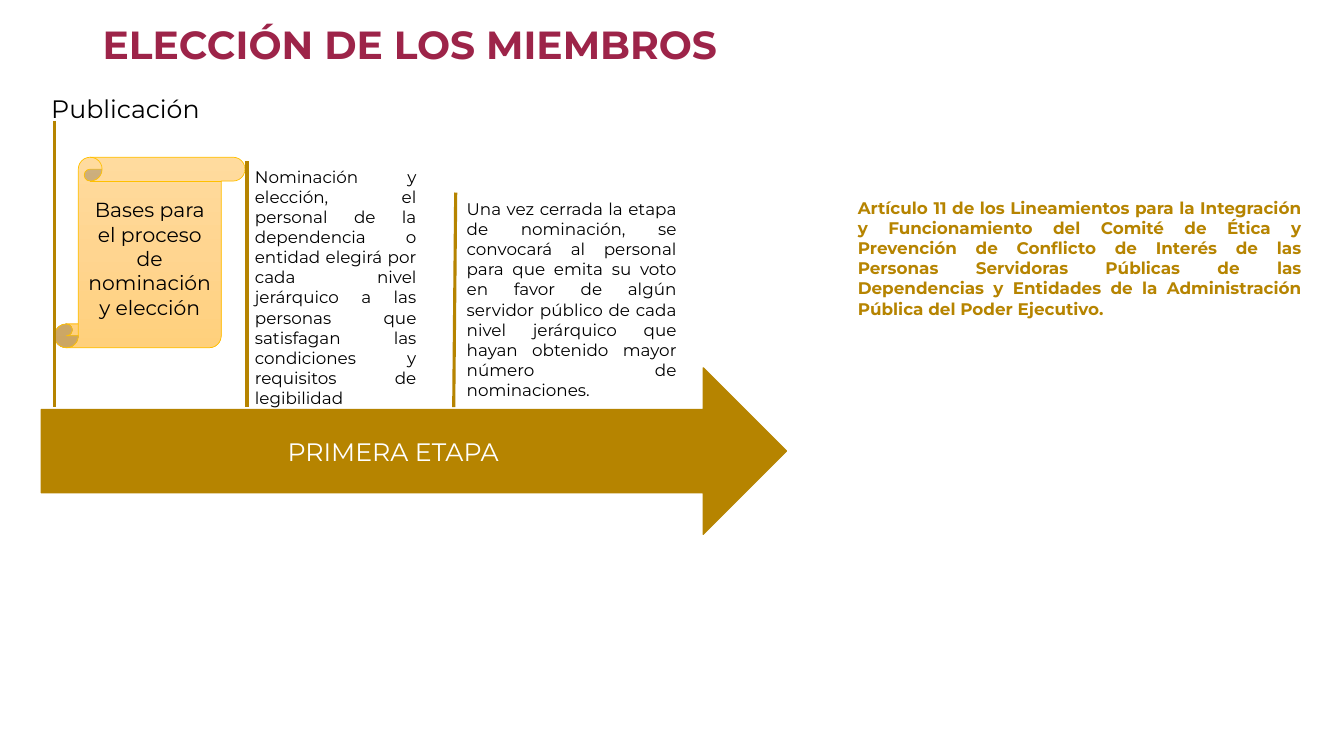
from copy import deepcopy

from pptx import Presentation
from pptx.dml.color import RGBColor
from pptx.enum.shapes import MSO_CONNECTOR, MSO_SHAPE
from pptx.enum.text import MSO_ANCHOR, MSO_AUTO_SIZE, PP_ALIGN
from pptx.oxml.ns import qn
from pptx.util import Inches, Pt
from lxml import etree

LEFT, CENTER, JUSTIFY = PP_ALIGN.LEFT, PP_ALIGN.CENTER, PP_ALIGN.JUSTIFY
MIDDLE = MSO_ANCHOR.MIDDLE
FIT_TEXT = MSO_AUTO_SIZE.SHAPE_TO_FIT_TEXT
STRAIGHT = MSO_CONNECTOR.STRAIGHT
SCROLL, ARROW = MSO_SHAPE.VERTICAL_SCROLL, MSO_SHAPE.RIGHT_ARROW

FONT = "Montserrat"
BURGUNDY = RGBColor(0x9D, 0x24, 0x49)
GOLD = RGBColor(0xB6, 0x84, 0x00)
AMBER = RGBColor(0xFF, 0xC0, 0x00)
BLACK = RGBColor(0x00, 0x00, 0x00)
WHITE = RGBColor(0xFF, 0xFF, 0xFF)
PARCHMENT = (
    (0, RGBColor(0xFF, 0xDB, 0x9E)),
    (0.5, RGBColor(0xFF, 0xD5, 0x90)),
    (1, RGBColor(0xFF, 0xD0, 0x7C)),
)

NOMINATION = (
    "Nominación y elección, el personal de la dependencia o entidad elegirá por "
    "cada nivel jerárquico a las personas que satisfagan las condiciones y "
    "requisitos de legibilidad"
)
VOTE = (
    "Una vez cerrada la etapa de nominación, se convocará al personal para que "
    "emita su voto en favor de algún servidor público de cada nivel jerárquico "
    "que hayan obtenido mayor número de nominaciones."
)
ARTICLE = (
    "Artículo 11 de los Lineamientos para la Integración y Funcionamiento del "
    "Comité de Ética y Prevención de Conflicto de Interés de las Personas "
    "Servidoras Públicas de las Dependencias y Entidades de la Administración "
    "Pública del Poder Ejecutivo."
)


def write(frame, text, size=12, color=BLACK, bold=False, align=JUSTIFY, spacing=None):
    """Put one formatted paragraph into a text frame."""
    paragraph = frame.paragraphs[0]
    paragraph.alignment = align
    paragraph.line_spacing = spacing
    run = paragraph.add_run()
    run.text = text
    run.font.name = FONT
    run.font.size = Pt(size)
    run.font.bold = bold
    run.font.color.rgb = color


def add_text(slide, box, text, wrap=True, grow=True, **text_format):
    """Add a text box with one paragraph."""
    frame = slide.shapes.add_textbox(*map(Inches, box)).text_frame
    frame.word_wrap = wrap
    if grow:
        frame.auto_size = FIT_TEXT
    write(frame, text, **text_format)


def add_labelled_shape(slide, kind, box, text, line_color, line_width, **text_format):
    """Add an outlined preset shape with centred text and return it."""
    shape = slide.shapes.add_shape(kind, *map(Inches, box))
    shape.shadow.inherit = False
    shape.line.color.rgb = line_color
    shape.line.width = Pt(line_width)
    shape.text_frame.vertical_anchor = MIDDLE
    write(shape.text_frame, text, align=CENTER, **text_format)
    return shape


def fill_parchment(shape):
    """Fill a shape with the downward three-stop gradient."""
    shape.fill.gradient()
    shape.fill.gradient_angle = 270
    stop_list = shape._element.spPr.find(qn("a:gradFill")).find(qn("a:gsLst"))
    stop_list.append(deepcopy(stop_list[-1]))
    for stop, (position, color) in zip(shape.fill.gradient_stops, PARCHMENT):
        stop.position = position
        stop.color.rgb = color


def add_marker(slide, top_x, top, bottom_x, bottom):
    """Add a gold line that rises from the timeline."""
    marker = slide.shapes.add_connector(
        STRAIGHT, *map(Inches, (top_x, top, bottom_x, bottom))
    )
    marker.line.color.rgb = GOLD
    marker.line.width = Pt(2.25)
    etree.SubElement(marker._element.spPr, qn("a:effectLst"))


def add_timeline(slide, left, top, width, height):
    """Draw the stage arrow with its three marked steps above it."""
    base = top + 0.39
    scroll = add_labelled_shape(
        slide, SCROLL, (left + 0.13, top - 2.09, 1.89, 1.89),
        "Bases para el proceso de nominación y elección", AMBER, 0.5, size=14.5,
    )
    fill_parchment(scroll)
    arrow = add_labelled_shape(
        slide, ARROW, (left, top, width, height),
        "PRIMERA ETAPA", GOLD, 1, size=18, color=WHITE,
    )
    arrow.fill.solid()
    arrow.fill.fore_color.rgb = GOLD
    for top_x, bottom_x, rise in ((0.13, 0.13, 2.84), (2.04, 2.04, 2.44), (4.11, 4.09, 2.13)):
        add_marker(slide, left + top_x, base - rise, left + bottom_x, base)
    add_text(slide, (left, top - 2.77, 1.69, 0.4), "Publicación",
             wrap=False, size=18, align=LEFT)
    add_text(slide, (left + 2.02, top - 2.05, 1.8, 2.52), NOMINATION)
    add_text(slide, (left + 4.12, top - 1.73, 2.28, 2.12), VOTE)


def main():
    """Build and save the slide."""
    presentation = Presentation()
    presentation.slide_width = Inches(13.33)
    presentation.slide_height = Inches(7.5)
    slide = presentation.slides.add_slide(presentation.slide_layouts[6])
    add_text(slide, (0.6, 0.21, 6.93, 0.54), "ELECCIÓN DE LOS MIEMBROS", grow=False,
             size=28, color=BURGUNDY, bold=True, align=CENTER, spacing=0.9)
    add_timeline(slide, 0.41, 3.65, 7.39, 1.65)
    add_text(slide, (8.41, 1.91, 4.6, 1.31), ARTICLE, color=GOLD, bold=True)
    presentation.save("out.pptx")


if __name__ == "__main__":
    main()
